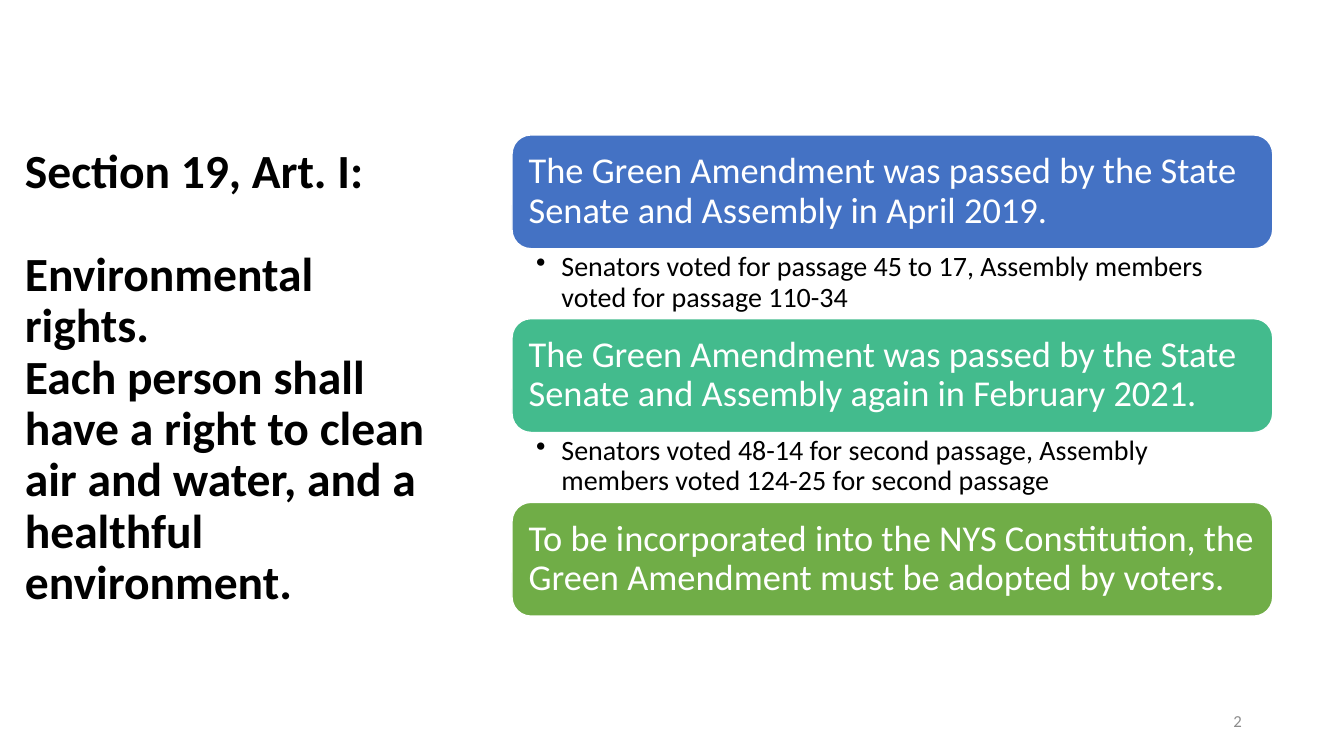
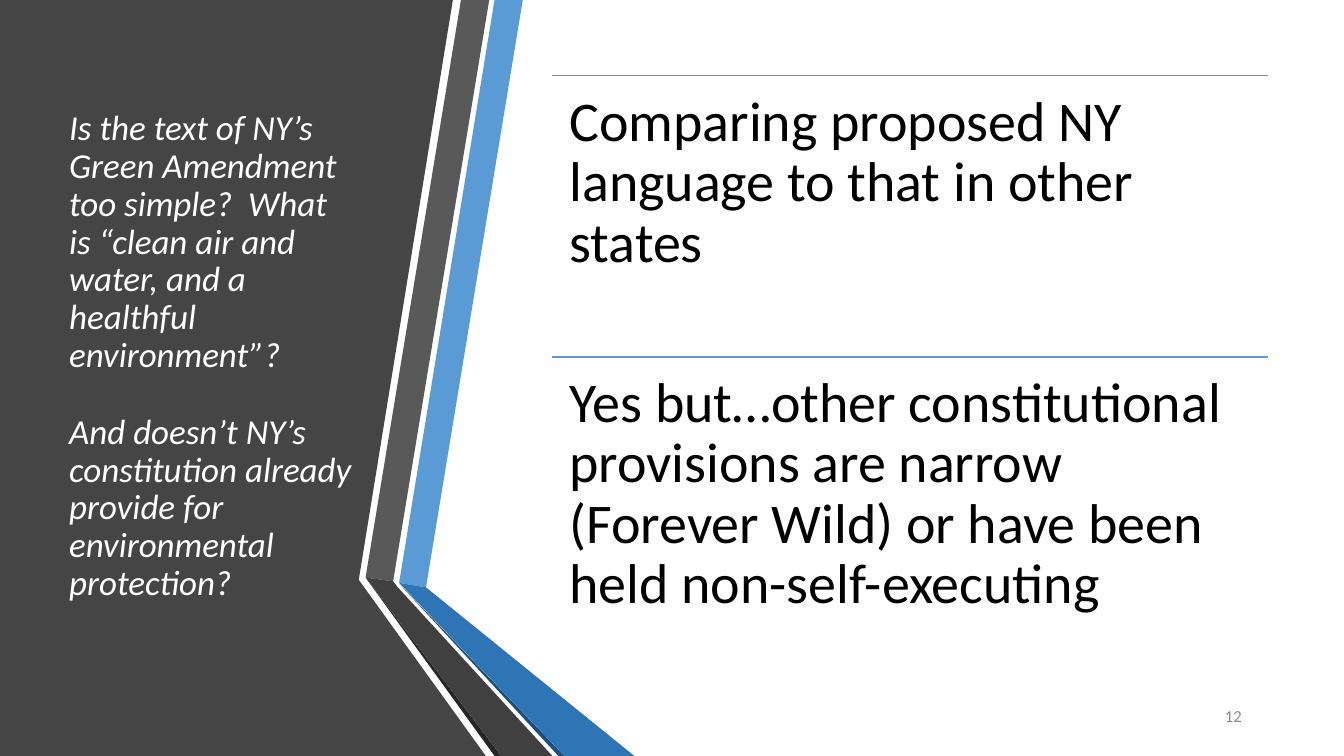
"""Build two slides on the Green Amendment: its passage and its wording."""
from lxml import etree
from pptx import Presentation
from pptx.dml.color import RGBColor
from pptx.enum.shapes import MSO_CONNECTOR, MSO_SHAPE
from pptx.enum.text import MSO_ANCHOR, MSO_AUTO_SIZE, PP_ALIGN
from pptx.oxml.ns import qn
from pptx.util import Inches, Pt

MIDDLE, TOP = MSO_ANCHOR.MIDDLE, MSO_ANCHOR.TOP
LEFT, RIGHT = PP_ALIGN.LEFT, PP_ALIGN.RIGHT
ROUNDED, STRAIGHT = MSO_SHAPE.ROUNDED_RECTANGLE, MSO_CONNECTOR.STRAIGHT
FONT = "Calibri"
BLACK, WHITE, GREY, SKY = "000000", "FFFFFF", "8C8C8C", "5B9BD5"
TITLE_ONLY = 5

presentation = Presentation()
presentation.slide_width = Inches(13.333)
presentation.slide_height = Inches(7.5)
column = presentation.slide_width / 100
row = presentation.slide_height / 100


def color(value):
    return RGBColor.from_string(value)


def write(shape, texts, size, ink, anchor=TOP, align=LEFT, insets=(0.1, 0.05, 0.1, 0.05), spacing=0.9):
    frame = shape.text_frame
    frame.word_wrap = True
    frame.auto_size = MSO_AUTO_SIZE.NONE
    frame.vertical_anchor = anchor
    frame.margin_left, frame.margin_top, frame.margin_right, frame.margin_bottom = map(Inches, insets)
    frame.text = "\n".join(texts)
    for index, paragraph in enumerate(frame.paragraphs):
        paragraph.alignment = align
        paragraph.line_spacing = spacing
        paragraph.space_before = Pt(round(size * 1.1) if index else 0)
        paragraph.font.name = FONT
        paragraph.font.size = Pt(size)
        paragraph.font.color.rgb = color(ink)
    return frame.paragraphs


titles = [
    (["Section 19, Art. I:",
      "Environmental rights.\vEach person shall have a right to clean air and water, and a healthful environment."],
     (1.1, 9.35, 32.2, 81.45), 34, BLACK, True, False, "2", 92.65),
    (["Is the text of NY’s Green Amendment too simple?  What is “clean air and water, and a healthful environment”?",
      "And doesn’t NY’s constitution already provide for environmental protection?"],
     (4.4, 10, 22.8, 74.4), 25, WHITE, False, True, "12", 92),
]
for texts, (left, top, width, height), size, ink, bold, italic, number, number_top in titles:
    slide = presentation.slides.add_slide(presentation.slide_layouts[TITLE_ONLY])
    title = slide.shapes.title
    title.left, title.width = round(left * column), round(width * column)
    title.top, title.height = round(top * row), round(height * row)
    for paragraph in write(title, texts, size, ink, MIDDLE):
        paragraph.font.bold = bold
        paragraph.font.italic = italic
    number_box = slide.shapes.add_textbox(
        round(84.2 * column), round(number_top * row), round(8.95 * column), round(5.35 * row))
    write(number_box, [number], 12, GREY, MIDDLE, RIGHT, spacing=1)

passage_slide, wording_slide = presentation.slides

steps = [
    ("4472C4", "The Green Amendment was passed by the State Senate and Assembly in April 2019.",
     "Senators voted for passage 45 to 17, Assembly members voted for passage 110-34"),
    ("43BB8D", "The Green Amendment was passed by the State Senate and Assembly again in February 2021.",
     "Senators voted 48-14 for second passage, Assembly members voted 124-25 for second passage"),
    ("70AD47", "To be incorporated into the NYS Constitution, the Green Amendment must be adopted by voters.", None),
]
step_left, step_width = round(38.1 * column), round(56.6 * column)
bar_height, vote_height = round(15.05 * row), round(9.25 * row)
for index, (fill, statement, vote) in enumerate(steps):
    top = round(17.85 * row) + index * (bar_height + vote_height)
    bar = passage_slide.shapes.add_shape(ROUNDED, step_left, top, step_width, bar_height)
    bar.shadow.inherit = False
    bar.fill.solid()
    bar.fill.fore_color.rgb = color(fill)
    bar.line.color.rgb = color(WHITE)
    bar.line.width = Pt(1)
    write(bar, [statement], 26, WHITE, MIDDLE, insets=(0.11, 0.11, 0.11, 0.11))
    if vote:
        vote_box = passage_slide.shapes.add_textbox(step_left, top + bar_height, step_width, vote_height)
        for paragraph in write(vote_box, [vote], 20, BLACK, insets=(0.24, 0.04, 0.2, 0.04)):
            properties = paragraph._p.get_or_add_pPr()
            properties.set("marL", str(Inches(0.25)))
            properties.set("indent", str(-Inches(0.25)))
            bullet = etree.Element(qn("a:buChar"), char="•")
            properties.find(qn("a:spcBef")).addnext(bullet)

bands = [
    ("454545", [(0, 0), (33.7, 0), (26.7, 76.7), (36.15, 100), (0, 100)]),
    (SKY, [(29.7, 77.1), (31.7, 77.7), (38.9, 0), (36.8, 0)]),
    ("595959", [(36.4, 0), (34.3, 0), (27.2, 76.4), (29.25, 76.9)]),
    ("262626", [(27.2, 76.4), (36.8, 100), (37.3, 100)]),
    ("1F4E79", [(29.7, 77.2), (41.55, 100), (42, 100)]),
    ("2E75B6", [(29.7, 77.1), (42, 100), (47.2, 100), (31.7, 77.7)]),
    ("404040", [(41.1, 100), (29.6, 77.7), (29.25, 76.9), (27.2, 76.4), (37.3, 100)]),
]
for fill, corners in bands:
    points = [(x * column, y * row) for x, y in corners]
    builder = wording_slide.shapes.build_freeform(*points[0])
    builder.add_line_segments(points[1:])
    band = builder.convert_to_shape()
    band.shadow.inherit = False
    band.fill.solid()
    band.fill.fore_color.rgb = color(fill)
    band.line.fill.background()
wording_slide.shapes._spTree.append(wording_slide.shapes.title._element)

answers = [
    "Comparing proposed NY language to that in other states",
    "Yes but…other constitutional provisions are narrow (Forever Wild) or have been held non-self-executing",
]
answer_left, answer_width, answer_height = round(41.1 * column), round(53.25 * column), round(37.2 * row)
for index, answer in enumerate(answers):
    top = round(10 * row) + index * answer_height
    rule = wording_slide.shapes.add_connector(STRAIGHT, answer_left, top, answer_left + answer_width, top)
    rule.line.color.rgb = color(SKY)
    rule.line.width = Pt(1)
    etree.SubElement(rule._element.spPr, qn("a:effectLst"))
    answer_box = wording_slide.shapes.add_textbox(answer_left, top, answer_width, answer_height)
    write(answer_box, [answer], 40, BLACK, insets=(0.17, 0.17, 0.17, 0.17))

presentation.save("out.pptx")
